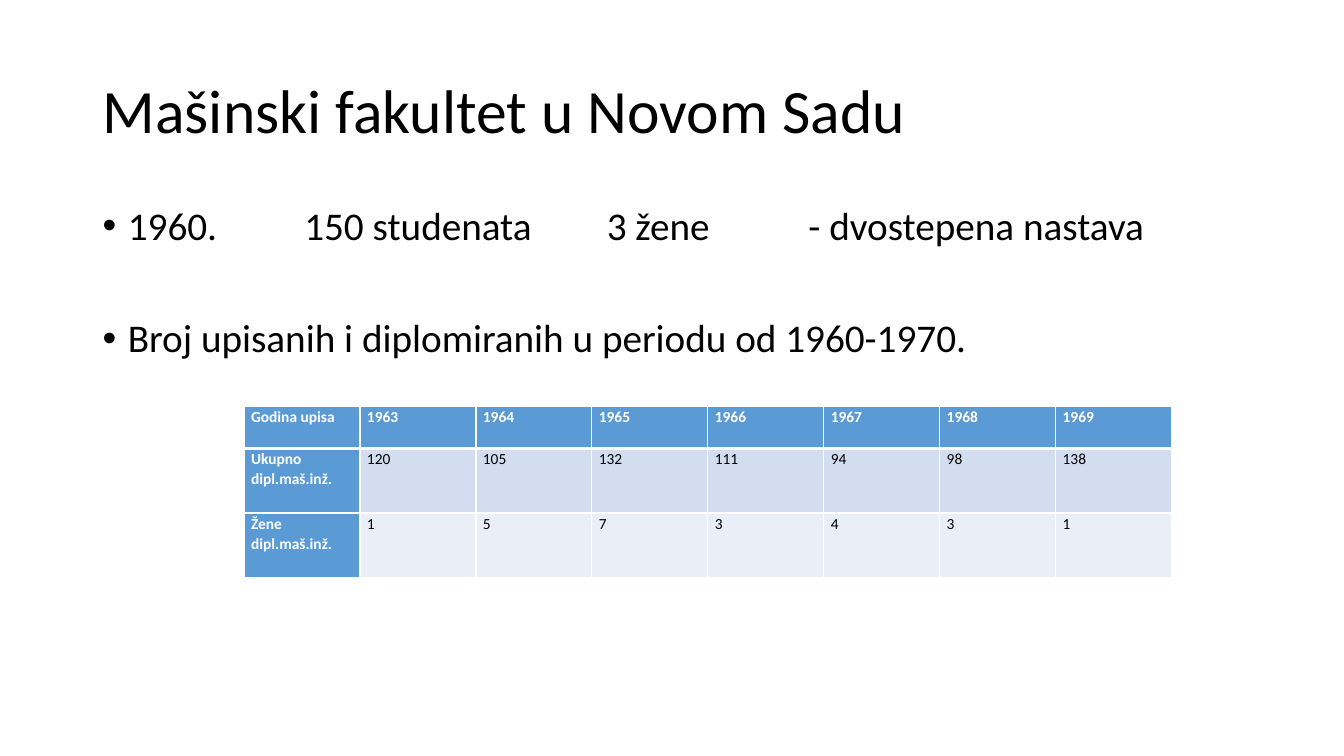
from lxml import etree
from pptx import Presentation
from pptx.dml.color import RGBColor
from pptx.enum.text import MSO_ANCHOR, PP_ALIGN
from pptx.oxml.ns import qn
from pptx.util import Inches, Pt

MIDDLE, TOP = MSO_ANCHOR.MIDDLE, MSO_ANCHOR.TOP
LEFT, JUSTIFY = PP_ALIGN.LEFT, PP_ALIGN.JUSTIFY

TITLE = "Mašinski fakultet u Novom Sadu"
BULLETS = [
    ("1960.\t150 studenata\t3 žene \t- dvostepena nastava", 10),
    ("Broj upisanih i diplomiranih u periodu od 1960-1970.", 50),
]
TAB_STOPS = [2, 5, 7]
ENROLMENT = [
    ["Godina upisa", "1963", "1964", "1965", "1966", "1967", "1968", "1969"],
    ["Ukupno dipl.maš.inž.", "120", "105", "132", "111", "94", "98", "138"],
    ["Žene dipl.maš.inž.", "1", "5", "7", "3", "4", "3", "1"],
]
COL_WIDTH = 1.15
ROW_HEIGHTS = [0.42, 0.64, 0.64]
THEME = {
    "font": "Calibri",
    "title": 44, "body": 28, "cell": 11,
    "text": "000000", "white": "FFFFFF", "header": "5B9BD5",
    "bands": ["D2DEEF", "EAEFF7"],
}


def rgb(name):
    return RGBColor.from_string(name)


def add_run(p, text, size, color, bold=False):
    r = p.add_run()
    r.text = text
    r.font.name = THEME["font"]
    r.font.size = Pt(THEME[size])
    r.font.bold = bold
    r.font.color.rgb = rgb(THEME[color])


def add_text_frame(s, left, top, width, height, anchor):
    tf = s.shapes.add_textbox(*map(Inches, (left, top, width, height))).text_frame
    tf.word_wrap = True
    tf.vertical_anchor = anchor
    return tf


def set_bullet(p):
    pPr = p._p.get_or_add_pPr()
    pPr.set("marL", str(Inches(0.25)))
    pPr.set("indent", str(-Inches(0.25)))
    etree.SubElement(pPr, qn("a:buFont"), typeface="Arial")
    etree.SubElement(pPr, qn("a:buChar"), char="•")
    tabs = etree.SubElement(pPr, qn("a:tabLst"))
    for stop in TAB_STOPS:
        etree.SubElement(tabs, qn("a:tab"), pos=str(Inches(stop)), algn="l")


def set_borders(cell, is_top, below_top):
    tcPr = cell._tc.get_or_add_tcPr()
    widths = {"L": 1, "R": 1, "T": 3 if below_top else 1, "B": 3 if is_top else 1}
    for side, width in widths.items():
        ln = etree.SubElement(tcPr, qn("a:ln" + side), w=str(Pt(width)))
        fill = etree.SubElement(ln, qn("a:solidFill"))
        etree.SubElement(fill, qn("a:srgbClr"), val=THEME["white"])


def fill_cell(cell, text, row, col):
    head = row == 0 or col == 0
    cell.margin_left = cell.margin_right = Inches(0.07)
    cell.margin_top = cell.margin_bottom = 0
    set_borders(cell, row == 0, row == 1)
    cell.fill.solid()
    cell.fill.fore_color.rgb = rgb(THEME["header"] if head else THEME["bands"][row - 1])
    p = cell.text_frame.paragraphs[0]
    p.alignment = JUSTIFY
    p.line_spacing = 1.07
    add_run(p, text, "cell", "white" if head else "text", head)


def main():
    prs = Presentation()
    prs.slide_width, prs.slide_height = Inches(13.33), Inches(7.5)
    s = prs.slides.add_slide(prs.slide_layouts[6])

    p = add_text_frame(s, 0.92, 0.4, 11.5, 1.45, MIDDLE).paragraphs[0]
    p.line_spacing = 0.9
    add_run(p, TITLE, "title", "text")

    tf = add_text_frame(s, 0.92, 2, 11.5, 4.76, TOP)
    for i, (text, gap) in enumerate(BULLETS):
        p = tf.add_paragraph() if i else tf.paragraphs[0]
        p.alignment = LEFT
        p.line_spacing = 0.9
        p.space_before = Pt(gap)
        set_bullet(p)
        add_run(p, text, "body", "text")

    rows, cols = len(ENROLMENT), len(ENROLMENT[0])
    table = s.shapes.add_table(rows, cols, Inches(2.42), Inches(4.03),
                               Inches(COL_WIDTH * cols), Inches(sum(ROW_HEIGHTS))).table
    for column in table.columns:
        column.width = Inches(COL_WIDTH)
    for row, values in enumerate(ENROLMENT):
        table.rows[row].height = Inches(ROW_HEIGHTS[row])
        for col, text in enumerate(values):
            fill_cell(table.cell(row, col), text, row, col)

    prs.save("out.pptx")


if __name__ == "__main__":
    main()
